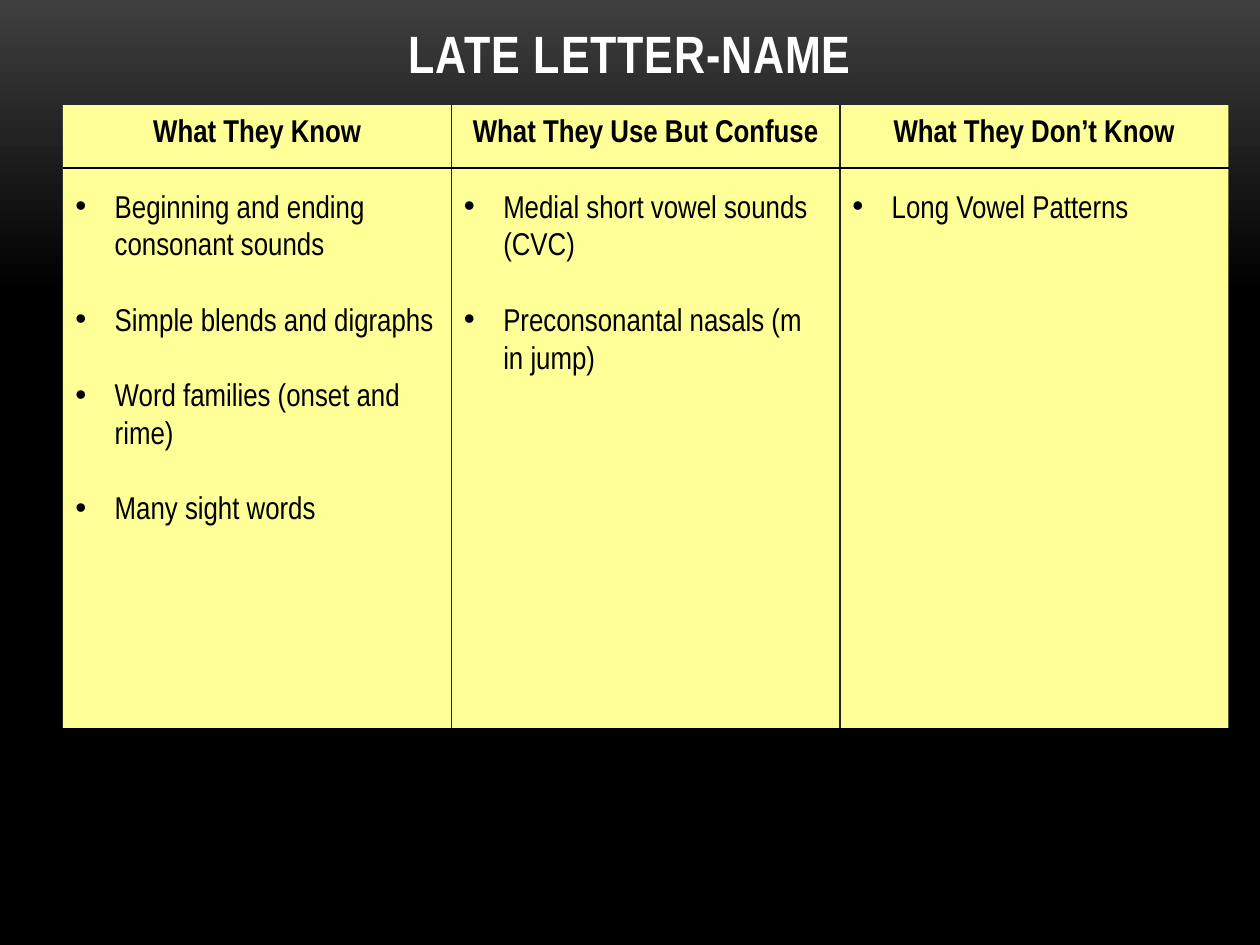
from lxml import etree
from pptx import Presentation
from pptx.dml.color import RGBColor
from pptx.enum import shapes, text
from pptx.oxml import ns
from pptx.util import Pt

FONT = "Arial Narrow"
COLUMNS = [
    ("What They Know", [
        "Beginning and ending consonant sounds",
        "Simple blends and digraphs",
        "Word families (onset and rime)",
        "Many sight words",
    ]),
    ("What They Use But Confuse", [
        "Medial short vowel sounds (CVC)",
        "Preconsonantal nasals (m in jump)",
    ]),
    ("What They Don’t Know", ["Long Vowel Patterns"]),
]


def colour(value):
    """Return the colour for a hex string."""
    return RGBColor.from_string(value)


def write(paragraph, wording, size=18, bold=False, ink="000000",
          align=text.PP_ALIGN.LEFT, before=0, bullet=False, spacing=0):
    """Write one formatted paragraph."""
    paragraph.alignment = align
    paragraph.space_before = Pt(before)
    if bullet:
        props = paragraph._p.get_or_add_pPr()
        props.set("marL", str(Pt(22.5)))
        props.set("indent", str(-Pt(22.5)))
        etree.SubElement(props, ns.qn("a:buFont"), typeface="Arial")
        etree.SubElement(props, ns.qn("a:buChar"), char="•")
    run = paragraph.add_run()
    run.text = wording
    run.font.name = FONT
    run.font.size = Pt(size)
    run.font.bold = bold
    run.font.color.rgb = colour(ink)
    if spacing:
        run._r.get_or_add_rPr().set("spc", str(int(spacing * 100)))


def add_title(slide, wording, left, top, width, height):
    """Place and format the slide title."""
    title = slide.shapes.title
    title.left, title.top = Pt(left), Pt(top)
    title.width, title.height = Pt(width), Pt(height)
    title.text_frame.vertical_anchor = text.MSO_ANCHOR.BOTTOM
    write(title.text_frame.paragraphs[0], wording, size=30, bold=True,
          ink="FFFFFF", align=text.PP_ALIGN.CENTER, spacing=0.5)


def add_column(slide, heading, skills, left, top, width, height):
    """Draw a panel with a heading and its bulleted skills."""
    panel = slide.shapes.add_shape(shapes.MSO_SHAPE.RECTANGLE, Pt(left),
                                   Pt(top), Pt(width), Pt(height))
    panel.shadow.inherit = False
    panel.fill.solid()
    panel.fill.fore_color.rgb = colour("FFFF97")
    panel.line.fill.background()
    frame = panel.text_frame
    frame.word_wrap = True
    frame.vertical_anchor = text.MSO_ANCHOR.TOP
    write(frame.paragraphs[0], heading, bold=True,
          align=text.PP_ALIGN.CENTER)
    for skill in skills:
        write(frame.add_paragraph(), skill, before=21.5, bullet=True)


def add_rule(slide, x1, y1, x2, y2, ink):
    """Draw a thin straight rule."""
    rule = slide.shapes.add_connector(shapes.MSO_CONNECTOR.STRAIGHT,
                                      Pt(x1), Pt(y1), Pt(x2), Pt(y2))
    rule.line.width = Pt(0.75)
    rule.line.color.rgb = colour(ink)
    etree.SubElement(rule._element.spPr, ns.qn("a:effectLst"))


def add_chart_of_skills(slide, left, top, width, height):
    """Lay out equal columns with rules between them and under the headings."""
    column_width = width / len(COLUMNS)
    edges = [left + i * column_width for i in range(len(COLUMNS))]
    for edge, (heading, skills) in zip(edges, COLUMNS):
        add_column(slide, heading, skills, edge, top, column_width, height)
    for edge in edges[1:]:
        add_rule(slide, edge, top, edge, top + height, "1F2123")
    add_rule(slide, left, top + 36, left + width, top + 36, "000000")


def paint_background(slide):
    """Fade the background from grey to black, downwards."""
    fill = slide.background.fill
    fill.gradient()
    fill.gradient_angle = 270
    for stop, (position, ink) in zip(fill.gradient_stops,
                                     [(0, "3F3F3F"), (0.31, "000000")]):
        stop.position = position
        stop.color.rgb = colour(ink)


def main():
    """Build and save the slide."""
    deck = Presentation()
    deck.slide_width, deck.slide_height = Pt(720), Pt(540)
    slide = deck.slides.add_slide(deck.slide_layouts[5])
    paint_background(slide)
    add_title(slide, "LATE LETTER-NAME", 48, -6, 624, 57.6)
    add_chart_of_skills(slide, 36, 60, 666, 356)
    deck.save("out.pptx")


if __name__ == "__main__":
    main()
